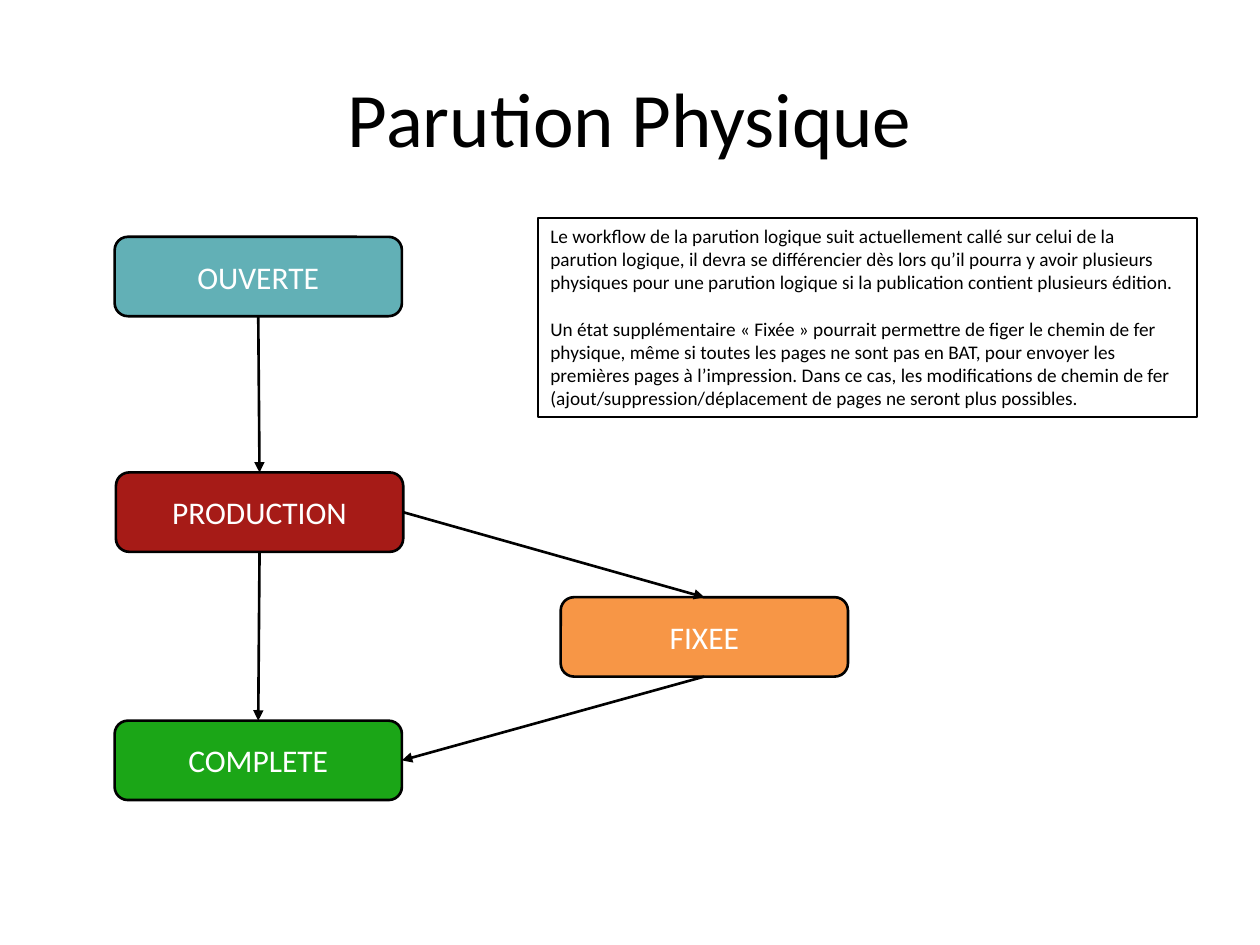
from lxml.etree import SubElement
from pptx import Presentation
from pptx.dml.color import RGBColor as RGB
from pptx.enum.shapes import MSO_CONNECTOR as LINK, MSO_SHAPE as SHAPE
from pptx.enum.text import MSO_ANCHOR as ANCHOR, PP_ALIGN as ALIGN
from pptx.oxml.ns import qn
from pptx.util import Inches, Pt

WIDE, HIGH = 10, 7.5
BOX_W, BOX_H = 2.28, 0.63
TOP, LEFT, BOTTOM, RIGHT = range(4)  # connection sites of a box

COLORS = {
    "ink": "000000",
    "paper": "FFFFFF",
    "open": "62B0B6",
    "work": "A61B17",
    "done": "1BA617",
    "fixed": "F79646",
}

# State: left, top, colour
STATES = {
    "OUVERTE": (0.91, 1.88, "open"),
    "PRODUCTION": (0.92, 3.75, "work"),
    "COMPLETE": (0.91, 5.72, "done"),
    "FIXEE": (4.45, 4.74, "fixed"),
}

# Step: from state, site, to state, site
STEPS = [
    ("OUVERTE", BOTTOM, "PRODUCTION", TOP),
    ("PRODUCTION", BOTTOM, "COMPLETE", TOP),
    ("PRODUCTION", RIGHT, "FIXEE", TOP),
    ("FIXEE", BOTTOM, "COMPLETE", RIGHT),
]

NOTES = [
    "Le workflow de la parution logique suit actuellement callé sur celui de la "
    "parution logique, il devra se différencier dès lors qu’il pourra y avoir "
    "plusieurs physiques pour une parution logique si la publication contient "
    "plusieurs édition.",
    "Un état supplémentaire « Fixée » pourrait permettre de figer le chemin de "
    "fer physique, même si toutes les pages ne sont pas en BAT, pour envoyer les "
    "premières pages à l’impression. Dans ce cas, les modifications de chemin de "
    "fer (ajout/suppression/déplacement de pages ne seront plus possibles.",
]


def color(name):
    return RGB.from_string(COLORS[name])


def style(para, size, ink, align=ALIGN.LEFT):
    para.alignment = align
    for run in para.runs:
        run.font.name = "Calibri"
        run.font.size = Pt(size)
        run.font.color.rgb = color(ink)


def stroke(line, width):
    line.color.rgb = color("ink")
    line.width = Pt(width)


def add_title(slide, text):
    title = slide.shapes.title
    title.left, title.top = Inches(WIDE * 0.05), Inches(HIGH * 0.04)
    title.width, title.height = Inches(WIDE * 0.9), Inches(HIGH / 6)
    frame = title.text_frame
    frame.text = text
    frame.vertical_anchor = ANCHOR.MIDDLE
    style(frame.paragraphs[0], 44, "ink", ALIGN.CENTER)


def add_state(slide, name, left, top, fill):
    box = slide.shapes.add_shape(
        SHAPE.ROUNDED_RECTANGLE,
        Inches(left), Inches(top), Inches(BOX_W), Inches(BOX_H))
    box.shadow.inherit = False
    box.fill.solid()
    box.fill.fore_color.rgb = color(fill)
    stroke(box.line, 1.5)
    frame = box.text_frame
    frame.text = name
    frame.vertical_anchor = ANCHOR.MIDDLE
    style(frame.paragraphs[0], 18, "paper", ALIGN.CENTER)
    return box


def add_notes(slide, texts):
    box = slide.shapes.add_textbox(
        Inches(4.27), Inches(1.73), Inches(5.23), Inches(1.58))
    stroke(box.line, 0.75)
    frame = box.text_frame
    frame.word_wrap = True
    frame.text = "\n".join(texts)
    for para in frame.paragraphs:
        style(para, 11, "ink")
    # One line of air between the paragraphs
    frame.paragraphs[0].space_after = Pt(13.4)


def add_step(slide, start, out, end, into):
    link = slide.shapes.add_connector(LINK.STRAIGHT, 0, 0, 0, 0)
    link.begin_connect(start, out)
    link.end_connect(end, into)
    stroke(link.line, 1.5)
    SubElement(link.line._get_or_add_ln(), qn("a:tailEnd"), type="triangle")
    SubElement(link._element.spPr, qn("a:effectLst"))


def main():
    deck = Presentation()
    deck.slide_width, deck.slide_height = Inches(WIDE), Inches(HIGH)
    slide = deck.slides.add_slide(deck.slide_layouts[5])

    add_title(slide, "Parution Physique")
    add_notes(slide, NOTES)

    # Workflow: states, then the steps between them
    boxes = {name: add_state(slide, name, *rest)
             for name, rest in STATES.items()}
    for start, out, end, into in STEPS:
        add_step(slide, boxes[start], out, boxes[end], into)

    deck.save("out.pptx")


if __name__ == "__main__":
    main()
